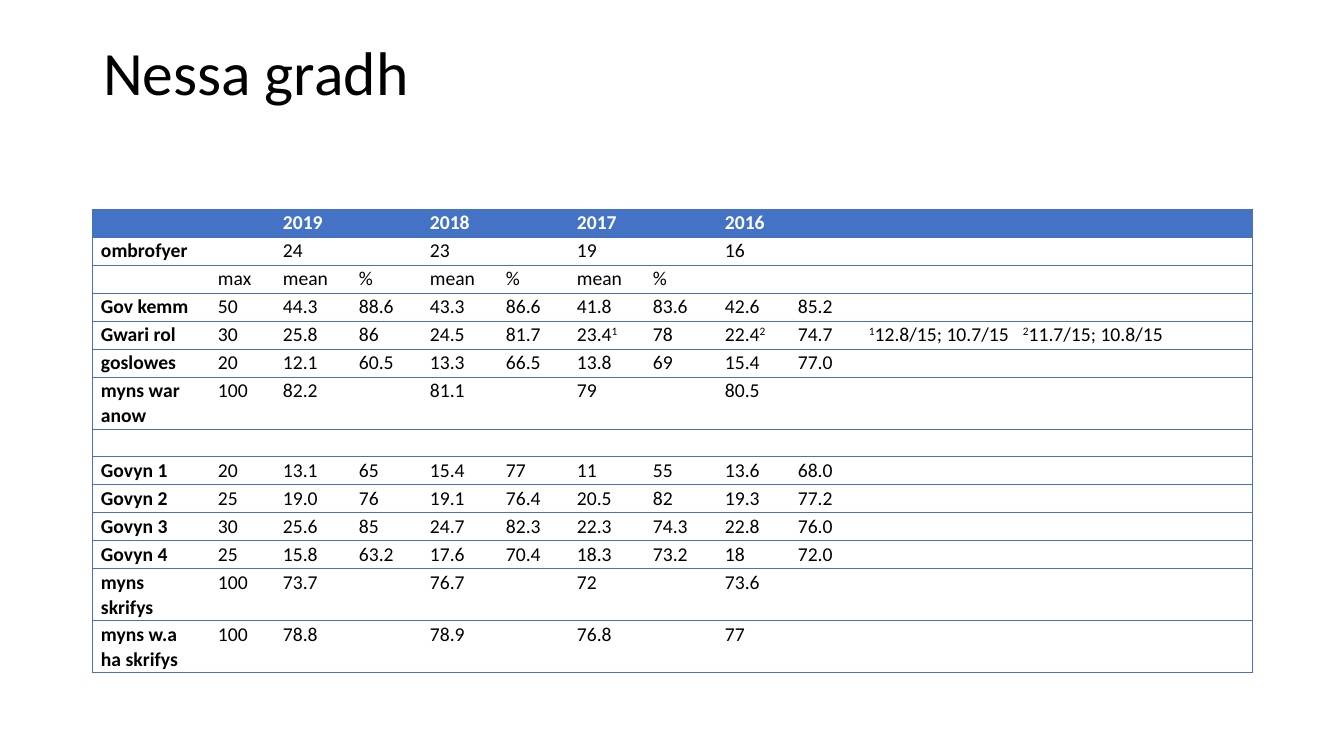
from pptx import Presentation
from pptx.dml.color import RGBColor
from pptx.enum.text import MSO_ANCHOR as Anchor, MSO_AUTO_SIZE as AutoSize, PP_ALIGN as Align
from pptx.oxml.ns import qn
from pptx.util import Pt
from lxml.etree import SubElement

PX = 914400 / 100.8
BLUE = RGBColor(0x44, 0x72, 0xC4)
BLACK = RGBColor(0, 0, 0)
WHITE = RGBColor(255, 255, 255)
PLAIN_TABLE = "{2D5ABB26-0587-4C30-8999-92F81FD0307C}"

COL_WIDTHS = [117, 65, 76, 71, 76, 71, 76, 72, 73, 71, 392]
ROW_HEIGHT, TALL_HEIGHT = 28, 52
TALL_ROWS = (6, 12, 13)
YEAR_COLS = (2, 4, 6, 8)
RESULTS = [
    ["", "", "2019", "", "2018", "", "2017", "", "2016"],
    ["ombrofyer", "", "24", "", "23", "", "19", "", "16"],
    ["", "max", "mean", "%", "mean", "%", "mean", "%"],
    ["Gov kemm", "50", "44.3", "88.6", "43.3", "86.6", "41.8", "83.6", "42.6", "85.2"],
    ["Gwari rol", "30", "25.8", "86", "24.5", "81.7", "23.4^1^", "78", "22.4^2^", "74.7",
     "^1^12.8/15; 10.7/15\t^2^11.7/15; 10.8/15"],
    ["goslowes", "20", "12.1", "60.5", "13.3", "66.5", "13.8", "69", "15.4", "77.0"],
    ["myns war anow", "100", "82.2", "", "81.1", "", "79", "", "80.5"],
    [],
    ["Govyn 1", "20", "13.1", "65", "15.4", "77", "11", "55", "13.6", "68.0"],
    ["Govyn 2", "25", "19.0", "76", "19.1", "76.4", "20.5", "82", "19.3", "77.2"],
    ["Govyn 3", "30", "25.6", "85", "24.7", "82.3", "22.3", "74.3", "22.8", "76.0"],
    ["Govyn 4", "25", "15.8", "63.2", "17.6", "70.4", "18.3", "73.2", "18", "72.0"],
    ["myns skrifys", "100", "73.7", "", "76.7", "", "72", "", "73.6"],
    ["myns w.a ha skrifys", "100", "78.8", "", "78.9", "", "76.8", "", "77"],
]


def px(n):
    return round(n * PX)


def write(tf, text, size=14, color=BLACK, bold=False, spacing=1.07, font="Calibri", tab=None):
    p = tf.paragraphs[0]
    p.alignment = Align.LEFT
    p.line_spacing = spacing
    if tab:
        tabs = SubElement(p._p.get_or_add_pPr(), qn("a:tabLst"))
        SubElement(tabs, qn("a:tab"), pos=str(px(tab)), algn="l")
    for i, part in enumerate(text.split("^")):
        if part:
            r = p.add_run()
            r.text = part
            r.font.size, r.font.name, r.font.bold = Pt(size), font, bold
            r.font.color.rgb = color
            if i % 2:
                r.font._element.set("baseline", "30000")
    p._p.get_or_add_endParaRPr().set("sz", str(size * 100))


class Deck:
    def __init__(self, width, height):
        self.prs = Presentation()
        self.prs.slide_width, self.prs.slide_height = px(width), px(height)
        self.s = self.prs.slides.add_slide(self.prs.slide_layouts[5])

    def title(self, text, x, y, w, h):
        sp = self.s.shapes.title
        sp.left, sp.top, sp.width, sp.height = px(x), px(y), px(w), px(h)
        tf = sp.text_frame
        tf.word_wrap, tf.auto_size = True, AutoSize.NONE
        tf.vertical_anchor = Anchor.TOP
        tf.margin_top = px(2)
        write(tf, text, size=44, spacing=0.9)

    def border(self, cell, sides):
        tcPr = cell._tc.get_or_add_tcPr()
        for side in sides:
            ln = SubElement(tcPr, qn(f"a:ln{side}"), w=str(Pt(0.5)))
            fill = SubElement(ln, qn("a:solidFill"))
            SubElement(fill, qn("a:srgbClr"), val=str(BLUE))

    def table(self, rows, widths, heights, x, y):
        frame = self.s.shapes.add_table(len(rows), len(widths), px(x), px(y),
                                        px(sum(widths)), px(sum(heights)))
        tbl = frame.table
        tbl._tbl.tblPr[0].text = PLAIN_TABLE
        tbl.horz_banding = False
        for col, w in zip(tbl.columns, widths):
            col.width = px(w)
        for row, h in zip(tbl.rows, heights):
            row.height = px(h)
        last = len(widths) - 1
        for i, row in enumerate(rows):
            for j in range(len(widths)):
                cell = tbl.cell(i, j)
                self.border(cell, "L" * (j == 0) + "R" * (j == last) + "TB")
                self.cell(cell, row[j] if j < len(row) else "", i == 0, j == 0)
        return tbl

    def cell(self, cell, text, header, label):
        cell.margin_left = cell.margin_right = px(9)
        cell.margin_top = cell.margin_bottom = 0
        if header:
            cell.fill.solid()
            cell.fill.fore_color.rgb = BLUE
        else:
            cell.fill.background()
        write(cell.text_frame, text, color=WHITE if header else BLACK,
              bold=header or label, tab=154 if "\t" in text else None)


def main():
    deck = Deck(1344, 756)
    deck.title("Nessa gradh", 93, 40, 1159, 146)
    heights = [TALL_HEIGHT if i in TALL_ROWS else ROW_HEIGHT for i in range(len(RESULTS))]
    tbl = deck.table(RESULTS, COL_WIDTHS, heights, 92, 209)
    for i in (0, 1):
        for j in YEAR_COLS:
            tbl.cell(i, j).merge(tbl.cell(i, j + 1))
    deck.prs.save("out.pptx")


if __name__ == "__main__":
    main()
